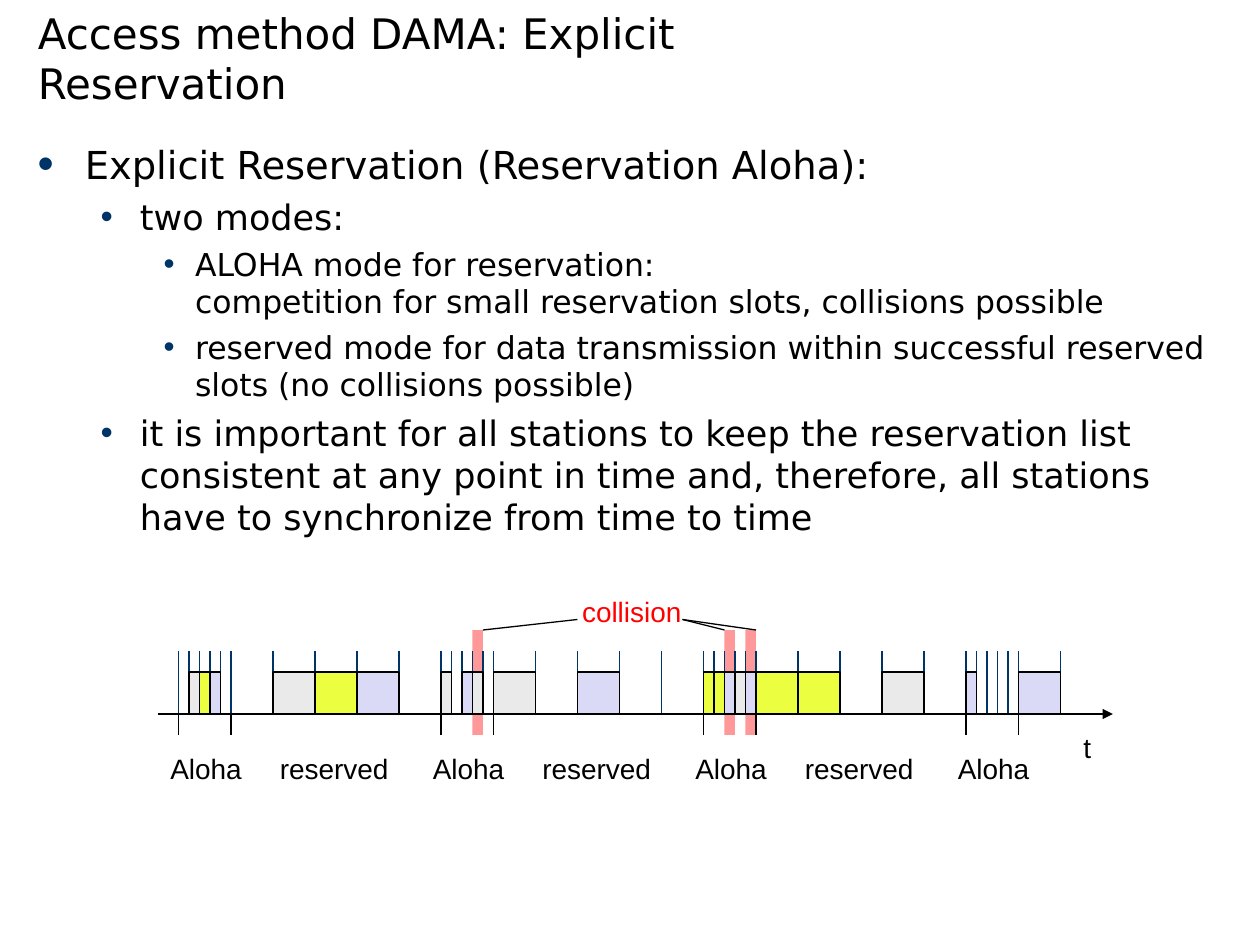
from dataclasses import dataclass

from lxml.etree import SubElement
from pptx import Presentation
from pptx.dml.color import RGBColor as Color
from pptx.enum.shapes import MSO_CONNECTOR as Connector, MSO_SHAPE as Preset
from pptx.enum.text import MSO_ANCHOR as Anchor, MSO_AUTO_SIZE as AutoSize, PP_ALIGN as Align
from pptx.oxml.ns import qn
from pptx.util import Pt


@dataclass(frozen=True)
class Theme:
    text: str = "000000"
    accent: str = "003366"
    alert: str = "FF0000"
    collision: str = "FF9999"
    yellow: str = "ECFE40"
    grey: str = "EAEAEA"
    lilac: str = "DADAF6"
    body_font: str = "DejaVu Sans"
    label_font: str = "Arial"
    title_size: float = 24
    body_sizes: tuple = (22, 20, 18)
    label_size: float = 16
    line_width: float = 0.75


@dataclass(frozen=True)
class Bullet:
    level: int
    text: str
    space_before: float = 0


@dataclass(frozen=True)
class Frame:
    aloha: str
    reserved: str
    collisions: tuple = ()


@dataclass(frozen=True)
class Label:
    text: str
    left: float
    top: float
    width: float
    color: str


THEME = Theme()
PACKET_COLORS = {"Y": THEME.yellow, "G": THEME.grey, "L": THEME.lilac}
INDENTS = ((27, -27), (58.5, -22.5), (90, -18))

BULLETS = (
    Bullet(0, "Explicit Reservation (Reservation Aloha):"),
    Bullet(1, "two modes:", 4.7),
    Bullet(2, "ALOHA mode for reservation:\v"
              "competition for small reservation slots, collisions possible", 4.2),
    Bullet(2, "reserved mode for data transmission within successful reserved "
              "slots (no collisions possible)", 4.2),
    Bullet(1, "it is important for all stations to keep the reservation list "
              "consistent at any point in time and, therefore, all stations "
              "have to synchronize from time to time", 4.7),
)

FRAMES = (
    Frame(".GYL.", ".GYL."),
    Frame("G.LG.", "G.L..", (3,)),
    Frame("YYLGL", "YY.G.", (2, 4)),
    Frame("L....", "L"),
)
FIRST_FRAME, FRAME_WIDTH = 102, 150
ALOHA_SLOT, RESERVED_SLOT = 6, 24
COLLISION_TOP, TICK_TOP, PACKET_TOP, AXIS, BOUNDARY_BOTTOM = 360, 372, 384, 408, 420
LABEL_TOP, LABEL_HEIGHT = 426, 26.6
POINTERS = ((276, 360, 330, 354), (432, 360, 390, 354), (390, 354, 414, 360))


def apply(target, values: dict) -> None:
    for name, value in values.items():
        setattr(target, name, value)


def set_font(paragraph, name: str, size: float, color: str) -> None:
    apply(paragraph.font, {"name": name, "size": Pt(size)})
    paragraph.font.color.rgb = Color.from_string(color)


def add_title(slide, text: str) -> None:
    title = slide.shapes.title
    apply(title, {"left": Pt(14.4), "top": Pt(0), "width": Pt(476), "height": Pt(65.5)})
    apply(title.text_frame, {"text": text, "word_wrap": True,
                             "auto_size": AutoSize.NONE, "vertical_anchor": Anchor.BOTTOM})
    paragraph = title.text_frame.paragraphs[0]
    paragraph.alignment = Align.LEFT
    set_font(paragraph, THEME.body_font, THEME.title_size, THEME.text)


def add_bullet_mark(paragraph, level: int) -> None:
    properties = paragraph._p.get_or_add_pPr()
    margin, indent = INDENTS[level]
    properties.set("marL", str(Pt(margin)))
    properties.set("indent", str(Pt(indent)))
    color = SubElement(properties, qn("a:buClr"))
    SubElement(color, qn("a:srgbClr"), val=THEME.accent)
    if level == 0:
        SubElement(properties, qn("a:buSzPct"), val="120000")
    SubElement(properties, qn("a:buFont"), typeface=THEME.label_font)
    SubElement(properties, qn("a:buChar"), char="•")


def add_body(slide, bullets: tuple[Bullet, ...]) -> None:
    text_frame = slide.shapes.add_textbox(Pt(14.4), Pt(77), Pt(692), Pt(421)).text_frame
    text_frame.word_wrap = True
    for index, bullet in enumerate(bullets):
        paragraph = text_frame.add_paragraph() if index else text_frame.paragraphs[0]
        apply(paragraph, {"text": bullet.text, "level": bullet.level})
        if bullet.space_before:
            paragraph.space_before = Pt(bullet.space_before)
        add_bullet_mark(paragraph, bullet.level)
        set_font(paragraph, THEME.body_font, THEME.body_sizes[bullet.level], THEME.text)


def add_line(slide, x1: float, y1: float, x2: float, y2: float,
             color: str = THEME.text, arrow: bool = False) -> None:
    connector = slide.shapes.add_connector(Connector.STRAIGHT, Pt(x1), Pt(y1), Pt(x2), Pt(y2))
    connector.line.width = Pt(THEME.line_width)
    connector.line.color.rgb = Color.from_string(color)
    if arrow:
        SubElement(connector.line._get_or_add_ln(), qn("a:tailEnd"), type="triangle")
    SubElement(connector._element.spPr, qn("a:effectLst"))


def add_block(slide, left: float, top: float, width: float, bottom: float,
              fill: str, outlined: bool = True) -> None:
    shape = slide.shapes.add_shape(Preset.RECTANGLE, Pt(left), Pt(top), Pt(width), Pt(bottom - top))
    shape.shadow.inherit = False
    shape.fill.solid()
    shape.fill.fore_color.rgb = Color.from_string(fill)
    if outlined:
        shape.line.width = Pt(THEME.line_width)
        shape.line.color.rgb = Color.from_string(THEME.text)
    else:
        shape.line.fill.background()


def add_label(slide, label: Label) -> None:
    box = slide.shapes.add_textbox(Pt(label.left), Pt(label.top), Pt(label.width), Pt(LABEL_HEIGHT))
    apply(box.text_frame, {"text": label.text, "word_wrap": False,
                           "auto_size": AutoSize.SHAPE_TO_FIT_TEXT,
                           "vertical_anchor": Anchor.MIDDLE})
    paragraph = box.text_frame.paragraphs[0]
    paragraph.alignment = Align.CENTER
    set_font(paragraph, THEME.label_font, THEME.label_size, label.color)


def add_frame(slide, frame: Frame, start: float) -> None:
    reserved_start = start + len(frame.aloha) * ALOHA_SLOT
    groups = ((frame.aloha, start, ALOHA_SLOT), (frame.reserved, reserved_start, RESERVED_SLOT))
    for index in frame.collisions:
        add_block(slide, start + index * ALOHA_SLOT, COLLISION_TOP, ALOHA_SLOT,
                  BOUNDARY_BOTTOM, THEME.collision, outlined=False)
    slots = [(group_start + index * width, width, packet)
             for packets, group_start, width in groups
             for index, packet in enumerate(packets)]
    for left, _, _ in slots:
        add_line(slide, left, TICK_TOP, left, AXIS, THEME.accent)
    if len(frame.reserved) == 1:
        end = reserved_start + RESERVED_SLOT
        add_line(slide, end, TICK_TOP, end, AXIS, THEME.accent)
    for boundary in (start, reserved_start):
        add_line(slide, boundary, AXIS, boundary, BOUNDARY_BOTTOM)
    for left, width, packet in slots:
        if packet in PACKET_COLORS:
            add_block(slide, left, PACKET_TOP, width, AXIS, PACKET_COLORS[packet])
    add_label(slide, Label("Aloha", start - 12, LABEL_TOP, 55.5, THEME.text))
    if len(frame.reserved) > 1:
        add_label(slide, Label("reserved", start + 50.5, LABEL_TOP, 77, THEME.text))


def main() -> None:
    presentation = Presentation()
    apply(presentation, {"slide_width": Pt(720), "slide_height": Pt(540)})
    slide = presentation.slides.add_slide(presentation.slide_layouts[5])
    add_title(slide, "Access method DAMA: Explicit Reservation")
    add_body(slide, BULLETS)
    for index, frame in enumerate(FRAMES):
        add_frame(slide, frame, FIRST_FRAME + index * FRAME_WIDTH)
    add_line(slide, 90, AXIS, 636, AXIS, arrow=True)
    add_label(slide, Label("collision", 325.5, 336, 71, THEME.alert))
    for pointer in POINTERS:
        add_line(slide, *pointer)
    add_label(slide, Label("t", 612, 414, 18.7, THEME.text))
    presentation.save("out.pptx")


if __name__ == "__main__":
    main()
